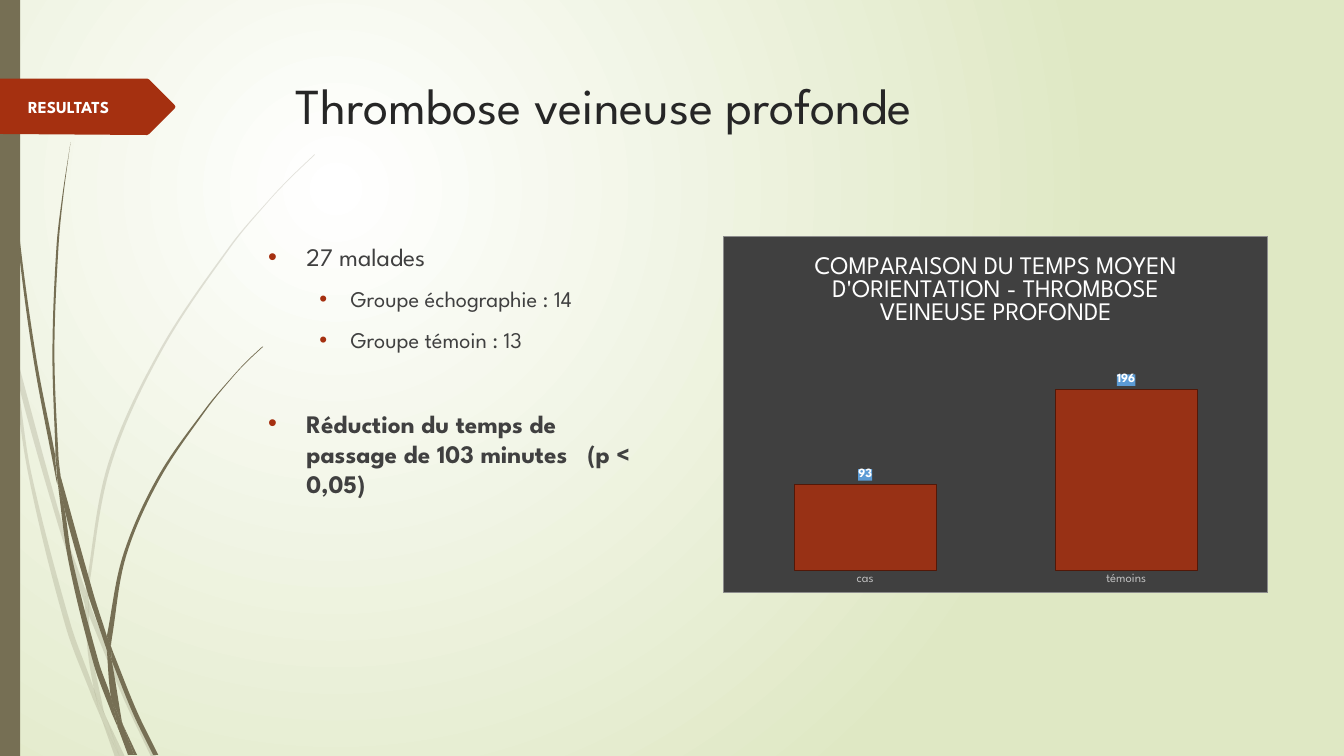
from dataclasses import dataclass
from math import dist

from pptx import Presentation
from pptx.chart.data import CategoryChartData
from pptx.dml.color import RGBColor
from pptx.enum.chart import XL_CHART_TYPE, XL_LABEL_POSITION, XL_TICK_MARK
from pptx.enum.shapes import MSO_SHAPE
from pptx.enum.text import MSO_ANCHOR, PP_ALIGN
from pptx.oxml import parse_xml
from pptx.oxml.ns import nsdecls, qn
from pptx.util import Emu, Inches, Pt

# Grid: 1333 columns by 750 rows, each cell 0.01 inch square.
COLS, ROWS = 1333, 750
CELL = Inches(1) // 100
FINE = 100  # path units in a cell
FONT = "League Spartan"
OLIVE, RUST, INK, GREY, WHITE = "766F54", "A53010", "262626", "404040", "FFFFFF"

Spot = tuple[float, float]


@dataclass
class Blade:
    """A piece of grass between two smooth edges, the second drawn back upwards."""
    down: list[Spot]
    back: list[Spot]


@dataclass
class Item:
    text: str
    size: int
    margin: float
    hang: float
    before: int = 10
    bold: bool = False


PALE = [
    Blade([(0, 282), (9, 322), (11, 350)], [(10, 344), (0, 299)]),
    Blade([(14, 345), (62, 520), (85, 586)], [(84, 599), (58, 522), (17, 376), (14, 345)]),
    Blade([(88, 596), (92, 607), (127, 692), (155, 751)], [(150, 751), (123, 694), (88, 610)]),
    Blade([(105, 711), (124, 751)], [(119, 751), (105, 711)]),
    Blade([(11, 350), (17, 376), (31, 469), (70, 619), (93, 683), (99, 707), (101, 714)],
          [(92, 693), (65, 621), (28, 470), (11, 350)]),
    Blade([(84, 599), (87, 646), (93, 683), (96, 692), (105, 711)],
          [(103, 706), (91, 646), (88, 610), (88, 608), (84, 599)]),
    Blade([(312, 153), (289, 175), (268, 197), (228, 244), (158, 348), (107, 461), (85, 584), (85, 586)],
          [(88, 596), (88, 584), (110, 462), (160, 349), (229, 245), (268, 198), (290, 175), (312, 154)]),
    Blade([(101, 714), (114, 751)], [(119, 751), (101, 714)]),
    Blade([(85, 586), (88, 596), (88, 610)], [(88, 608), (84, 599)]),
    Blade([(93, 683), (96, 692), (105, 711), (119, 751)], [(101, 714), (99, 707), (93, 683)]),
]
DARK = [
    Blade([(4, 0), (5, 48), (8, 109), (19, 232), (36, 355), (55, 453), (55, 457), (57, 481)],
          [(56, 477), (33, 355), (17, 233), (7, 110), (4, 48), (3, 0)]),
    Blade([(60, 472), (93, 590), (106, 631), (106, 633), (106, 645)], [(88, 592), (64, 505), (60, 472)]),
    Blade([(110, 641), (113, 649), (136, 706), (157, 749)], [(152, 749), (132, 708), (111, 656)]),
    Blade([(57, 477), (64, 505), (72, 556), (98, 657), (110, 691), (116, 717), (117, 722)],
          [(111, 708), (93, 659), (68, 557), (57, 477)]),
    Blade([(70, 141), (63, 193), (58, 245), (54, 349), (58, 453), (60, 472)],
          [(55, 449), (52, 349), (56, 245), (62, 193), (70, 141)]),
    Blade([(122, 719), (136, 749)], [(133, 749), (122, 719)]),
    Blade([(55, 449), (60, 472), (64, 505)], [(57, 477), (55, 453)]),
    Blade([(261, 344), (245, 359), (231, 374), (205, 406), (158, 476), (125, 552), (111, 633), (110, 641)],
          [(106, 631), (122, 551), (156, 474), (204, 405), (231, 373), (245, 358), (260, 344)]),
    Blade([(117, 722), (131, 749)], [(127, 749), (117, 722)]),
    Blade([(106, 645), (109, 651), (111, 656), (121, 716), (122, 719)],
          [(116, 706), (110, 691), (106, 645)]),
    Blade([(106, 631), (110, 641), (111, 656)], [(109, 651), (106, 645), (106, 633)]),
    Blade([(110, 691), (116, 706), (122, 719), (133, 749)], [(130, 749), (117, 722), (116, 717), (110, 691)]),
]
FLAG = [(0, 78), (146, 78), (148, 79), (173, 104), (174, 106), (173, 108), (148, 133), (146, 134), (0, 133)]

ITEMS = [
    Item("27 malades", 18, 0.38, 0.38),
    Item("Groupe échographie : 14", 16, 0.82, 0.31),
    Item("Groupe témoin : 13", 16, 0.82, 0.31),
    Item("Réduction du temps de passage de 103 minutes   (p < 0,05)", 18, 0.38, 0.38, 39, True),
]


def hue(code: str) -> RGBColor:
    return RGBColor.from_string(code)


def box(left: float, top: float, width: float, height: float) -> list[Emu]:
    return [Emu(int(n * CELL)) for n in (left, top, width, height)]


def style(font, size: int, color: str, bold: bool = False) -> None:
    font.name, font.size, font.bold = FONT, Pt(size), bold
    font.color.rgb = hue(color)


def paint(fill, color: str, alpha: int = 100) -> None:
    fill.solid()
    fill.fore_color.rgb = hue(color)
    if alpha < 100:
        tint = fill._xPr.find(".//" + qn("a:srgbClr"))
        tint.append(parse_xml(f'<a:alpha {nsdecls("a")} val="{alpha * 1000}"/>'))


def plain(shape, color: str, alpha: int = 100) -> None:
    paint(shape.fill, color, alpha)
    shape.line.fill.background()
    shape.shadow.inherit = False


def outline(shapes, spots: list[Spot]):
    first, *rest = [(x * FINE, y * FINE) for x, y in spots]
    pen = shapes.build_freeform(*first, scale=CELL / FINE)
    pen.add_line_segments(rest, close=True)
    return pen.convert_to_shape()


def slope(a: Spot, b: Spot, c: Spot, reach: float) -> Spot:
    """Third of the tangent at b, scaled to a stretch of the given length."""
    span = dist(a, b) + dist(b, c)
    return tuple((r - p) * reach / span / 3 for p, r in zip(a, c))


def draw_blade(shapes, blade: Blade, alpha: int) -> None:
    spots = blade.down + blade.back
    shape = outline(shapes, spots)
    left, top = (min(axis) for axis in zip(*spots))
    lines = list(shape._element.iter(qn("a:lnTo")))
    for edge, start in ((blade.down, 0), (blade.back, len(blade.down))):
        ends = [edge[0], *edge, edge[-1]]
        for i, (a, b, c, d) in enumerate(zip(ends, ends[1:], ends[2:], ends[3:])):
            reach = dist(b, c)
            out, into = slope(a, b, c, reach), slope(b, c, d, reach)
            turns = ((b[0] + out[0], b[1] + out[1]), (c[0] - into[0], c[1] - into[1]), c)
            marks = "".join(f'<a:pt x="{round((x - left) * FINE)}" y="{round((y - top) * FINE)}"/>'
                            for x, y in turns)
            line = lines[start + i]
            line.getparent().replace(line, parse_xml(
                f'<a:cubicBezTo {nsdecls("a")}>{marks}</a:cubicBezTo>'))
    plain(shape, OLIVE, alpha)


def draw_back(slide) -> None:
    fill = slide.background.fill
    fill.gradient()
    for stop, place, color in zip(fill.gradient_stops, (0, 1), (WHITE, "DFE8C4")):
        stop.position, stop.color.rgb = place, hue(color)
    grad = slide._element.find(".//" + qn("a:gradFill"))
    grad.replace(grad.find(qn("a:lin")), parse_xml(
        f'<a:path {nsdecls("a")} path="circle"><a:fillToRect l="50000" t="50000" '
        'r="100000" b="100000"/></a:path>'))


def draw_list(shapes) -> None:
    frame = shapes.add_textbox(*box(256, 234.5, 381, 413)).text_frame
    frame.word_wrap = True
    for i, item in enumerate(ITEMS):
        para = frame.paragraphs[0] if i == 0 else frame.add_paragraph()
        para.text, para.space_before = item.text, Pt(item.before)
        style(para.font, item.size, GREY, item.bold)
        props = para._p.get_or_add_pPr()
        props.set("marL", str(Inches(item.margin)))
        props.set("indent", str(-Inches(item.hang)))
        marks = (f'<a:buClr {nsdecls("a")}><a:srgbClr val="{RUST}"/></a:buClr>',
                 f'<a:buFont {nsdecls("a")} typeface="Arial"/>',
                 f'<a:buChar {nsdecls("a")} char="•"/>')
        for mark in map(parse_xml, marks):
            props.find(qn("a:defRPr")).addprevious(mark)


def area(color: str, line: str = "") -> object:
    """Build chart shape properties with a solid fill and an optional thin line."""
    edge = f'<a:solidFill><a:srgbClr val="{line}"/></a:solidFill>' if line else "<a:noFill/>"
    return parse_xml(
        f'<c:spPr {nsdecls("c", "a")}><a:solidFill><a:srgbClr val="{color}"/></a:solidFill>'
        f'<a:ln w="6350">{edge}</a:ln></c:spPr>')


def draw_chart(shapes) -> None:
    data = CategoryChartData()
    data.categories = ["cas", "témoins"]
    data.add_series("Series 1", [93, 196])
    chart = shapes.add_chart(XL_CHART_TYPE.COLUMN_CLUSTERED, *box(717.5, 234, 540, 354.5), data).chart
    style(chart.font, 10, "000000")
    chart.has_legend = False
    chart._chartSpace.find(qn("c:chart")).addnext(area(GREY, "8C8C8C"))
    chart.has_title = True
    head = chart.chart_title.text_frame
    head.text = "COMPARAISON DU TEMPS MOYEN D'ORIENTATION - THROMBOSE VEINEUSE PROFONDE"
    style(head.paragraphs[0].font, 18, WHITE)
    chart.chart_title.include_in_layout = False

    axis = chart.category_axis
    axis.major_tick_mark = XL_TICK_MARK.NONE
    axis.format.line.fill.background()
    style(axis.tick_labels.font, 9, "BFBFBF")
    chart.value_axis.visible = False
    chart.value_axis.has_major_gridlines = False
    chart.value_axis.minimum_scale = 0

    plot = chart.plots[0]
    plot.gap_width, plot.vary_by_categories = 84, False
    bars = plot.series[0]
    paint(bars.format.fill, RUST, 88)
    bars.format.line.color.rgb, bars.format.line.width = hue("521808"), Pt(0.75)
    labels = bars.data_labels
    labels.show_value, labels.position = True, XL_LABEL_POSITION.OUTSIDE_END
    style(labels.font, 9, WHITE, True)
    labels._element.find(qn("c:txPr")).addprevious(area("5B9BD5"))


def main() -> None:
    deck = Presentation()
    deck.slide_width, deck.slide_height = Emu(COLS * CELL), Emu(ROWS * CELL)
    slide = deck.slides.add_slide(deck.slide_layouts[5])
    shapes = slide.shapes
    draw_back(slide)
    for blades, alpha in ((PALE, 20), (DARK, 100)):
        tuft = shapes.add_group_shape()
        for blade in blades:
            draw_blade(tuft.shapes, blade, alpha)
    plain(shapes.add_shape(MSO_SHAPE.RECTANGLE, *box(0, 0, 20, ROWS)), OLIVE)
    plain(outline(shapes, FLAG), RUST)

    title = shapes.title
    title.left, title.top, title.width, title.height = box(283.5, 68.5, 975, 140)
    tag = shapes.add_textbox(*box(18, 91, 147, 29))
    for shape, text, size, color, bold in (
            (title, "Thrombose veineuse profonde", 36, INK, False),
            (tag, "RESULTATS", 12, WHITE, True)):
        frame = shape.text_frame
        frame.text, frame.word_wrap, frame.vertical_anchor = text, True, MSO_ANCHOR.TOP
        frame.paragraphs[0].alignment = PP_ALIGN.LEFT
        style(frame.paragraphs[0].font, size, color, bold)
    draw_list(shapes)
    draw_chart(shapes)
    deck.save("out.pptx")


if __name__ == "__main__":
    main()
